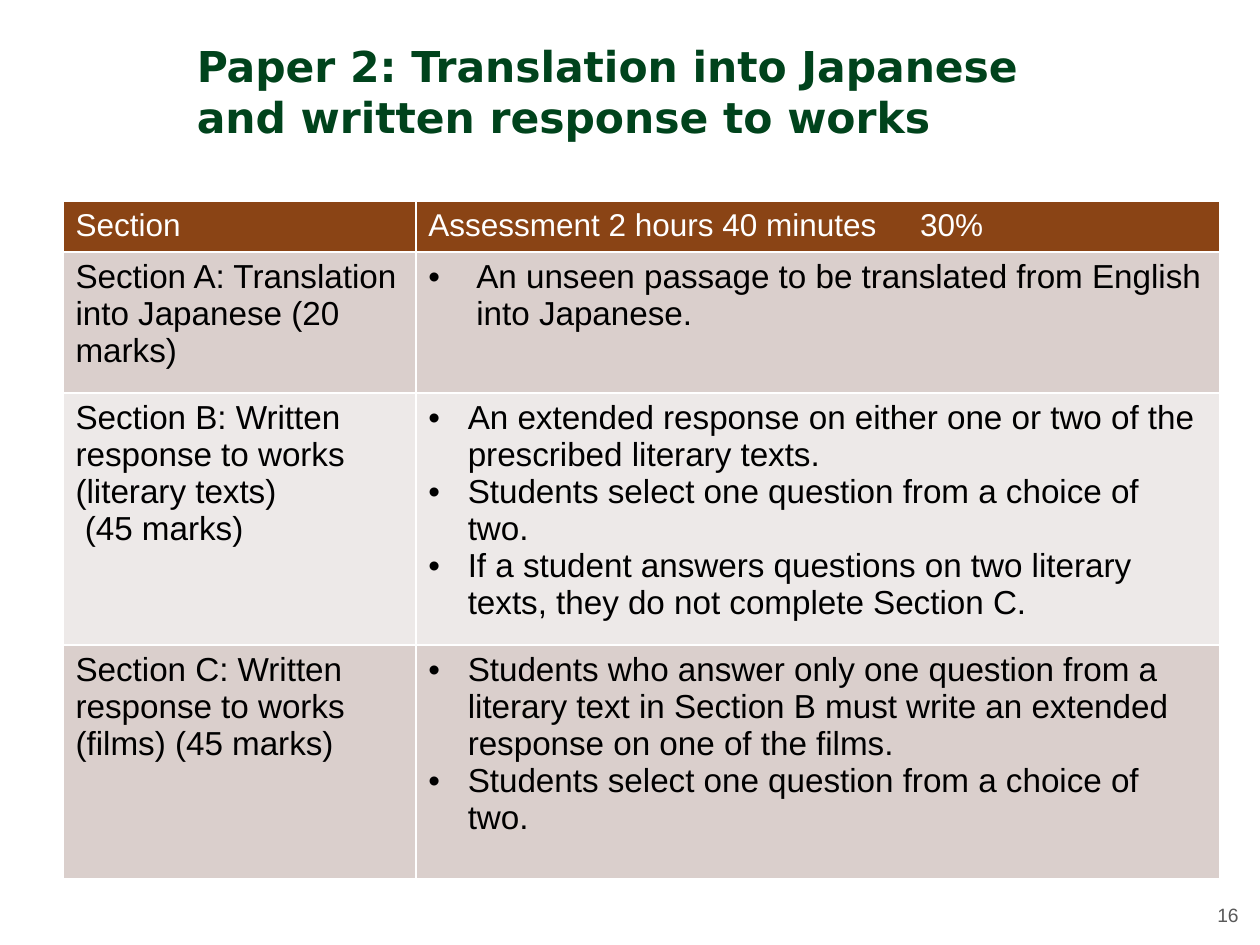
from lxml.etree import SubElement
from pptx import Presentation
from pptx.dml.color import RGBColor
from pptx.enum.text import PP_ALIGN
from pptx.oxml.ns import qn
from pptx.util import Pt


def style(paragraph, size, color, name="Arial", bold=False):
    font = paragraph.font
    font.name, font.size, font.bold = name, Pt(size), bold
    font.color.rgb = RGBColor.from_string(color)


def add_bullet(paragraph, indent):
    properties = paragraph._p.get_or_add_pPr()
    properties.set("marL", str(Pt(indent)))
    properties.set("indent", str(-Pt(indent)))
    SubElement(properties, qn("a:buFont")).set("typeface", "Arial")
    SubElement(properties, qn("a:buChar")).set("char", "•")


deck = Presentation()
deck.slide_width, deck.slide_height = Pt(720), Pt(540)
page = deck.slides.add_slide(deck.slide_layouts[6])

# Title
title = page.shapes.add_textbox(Pt(112.5), Pt(23), Pt(485), Pt(60)).text_frame
title.word_wrap = True
title.margin_left = title.margin_right = title.margin_top = title.margin_bottom = 0
title.text = "Paper 2: Translation into Japanese and written response to works"
style(title.paragraphs[0], 24.3, "00431C", "DejaVu Sans", True)

# Assessment table: section lines, bullet indent, bullets, row height, fill
sections = [
    (["Section A: Translation into Japanese (20 marks)"], 27.4,
     ["An unseen passage to be translated from English into Japanese."],
     80.6, "DACFCC"),
    (["Section B: Written response to works (literary texts)", "(45 marks)"], 22.5,
     ["An extended response on either one or two of the prescribed literary texts.",
      "Students select one question from a choice of two.",
      "If a student answers questions on two literary texts, "
      "they do not complete Section C."],
     134.2, "EDE9E8"),
    (["Section C: Written response to works (films) (45 marks)"], 22.5,
     ["Students who answer only one question from a literary text in Section B "
      "must write an extended response on one of the films.",
      "Students select one question from a choice of two."],
     133.6, "DACFCC"),
]
table = page.shapes.add_table(4, 2, Pt(36), Pt(115.2), Pt(661), Pt(375.4)).table
table.columns[0].width, table.columns[1].width = Pt(201.6), Pt(459.4)

table.rows[0].height = Pt(27)
headings = ["Section", "Assessment 2 hours 40 minutes\t30%"]
for cell, heading in zip(table.rows[0].cells, headings):
    cell.fill.solid()
    cell.fill.fore_color.rgb = RGBColor.from_string("8A4415")
    cell.text = heading
    paragraph = cell.text_frame.paragraphs[0]
    if "\t" in heading:
        tabs = SubElement(paragraph._p.get_or_add_pPr(), qn("a:tabLst"))
        tab = SubElement(tabs, qn("a:tab"))
        tab.set("pos", str(Pt(281)))
        tab.set("algn", "l")
    style(paragraph, 18, "FFFFFF")

for number, (labels, indent, bullets, height, fill) in enumerate(sections, 1):
    table.rows[number].height = Pt(height)
    for column, lines in enumerate((labels, bullets)):
        cell = table.cell(number, column)
        cell.fill.solid()
        cell.fill.fore_color.rgb = RGBColor.from_string(fill)
        cell.text = "\n".join(lines)
        for position, paragraph in enumerate(cell.text_frame.paragraphs):
            if column == 1:
                add_bullet(paragraph, indent)
            elif position > 0:
                paragraph._p.get_or_add_pPr().set("marL", str(Pt(5.3)))
            style(paragraph, 19, "000000")

# Page number
footer = page.shapes.add_textbox(Pt(685.4), Pt(512.6), Pt(29.6), Pt(21)).text_frame
footer.text = "16"
footer.paragraphs[0].alignment = PP_ALIGN.RIGHT
style(footer.paragraphs[0], 11, "595959")

deck.save("out.pptx")
